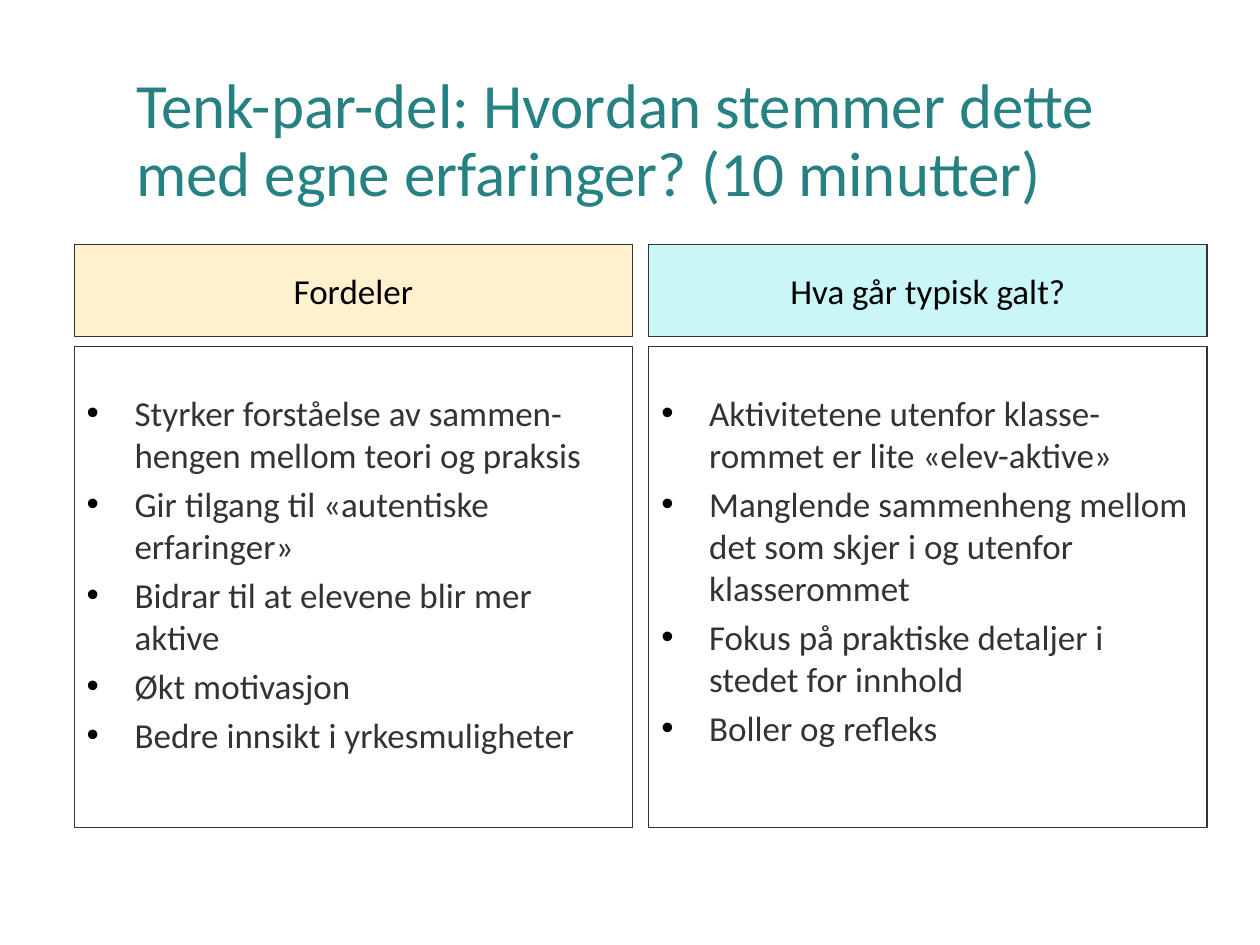
from dataclasses import dataclass

from lxml import etree
from pptx import Presentation
from pptx.dml.color import RGBColor
from pptx.enum.shapes import MSO_SHAPE
from pptx.enum.text import MSO_ANCHOR, MSO_AUTO_SIZE, PP_ALIGN
from pptx.oxml.ns import qn
from pptx.util import Inches, Pt

RECT = MSO_SHAPE.RECTANGLE
TOP, MIDDLE = MSO_ANCHOR.TOP, MSO_ANCHOR.MIDDLE
LEFT, CENTER = PP_ALIGN.LEFT, PP_ALIGN.CENTER


@dataclass(frozen=True)
class Theme:
    font: str = "Calibri"
    title: str = "268183"
    ink: str = "333333"
    black: str = "000000"
    title_size: int = 36
    text_size: int = 20
    bullet_gap: int = 4
    line_width: float = 0.75


@dataclass(frozen=True)
class Grid:
    left: float = 0.59
    column: float = 4.43
    gutter: float = 0.13
    header_top: float = 1.94
    header_height: float = 0.73
    row_gap: float = 0.08
    body_height: float = 3.82

    def x(self, col: int) -> float:
        return self.left + col * (self.column + self.gutter)

    @property
    def body_top(self) -> float:
        return self.header_top + self.header_height + self.row_gap


@dataclass(frozen=True)
class Column:
    heading: str
    fill: str
    points: tuple[str, ...]


THEME = Theme()
GRID = Grid()
COLUMNS = (
    Column("Fordeler", "FFF1CE", (
        "Styrker forståelse av sammen-hengen mellom teori og praksis",
        "Gir tilgang til «autentiske erfaringer»",
        "Bidrar til at elevene blir mer aktive",
        "Økt motivasjon",
        "Bedre innsikt i yrkesmuligheter",
    )),
    Column("Hva går typisk galt?", "C9F7F8", (
        "Aktivitetene utenfor klasse-rommet er lite «elev-aktive»",
        "Manglende sammenheng mellom det som skjer i og utenfor klasserommet",
        "Fokus på praktiske detaljer i stedet for innhold",
        "Boller og refleks",
    )),
)


def add_run(p, text: str, size: int, color: str) -> None:
    r = p.add_run()
    r.text = text
    r.font.name = THEME.font
    r.font.size = Pt(size)
    r.font.color.rgb = RGBColor.from_string(color)


def set_frame(tf, anchor, side: float, top: float, bottom: float) -> None:
    tf.word_wrap = True
    tf.auto_size = MSO_AUTO_SIZE.NONE
    tf.vertical_anchor = anchor
    tf.margin_left = tf.margin_right = Inches(side)
    tf.margin_top, tf.margin_bottom = Inches(top), Inches(bottom)


def add_bullet(p) -> None:
    pPr = p._p.get_or_add_pPr()
    pPr.set("marL", str(Inches(0.38)))
    pPr.set("indent", str(-Inches(0.38)))
    color = etree.SubElement(pPr, qn("a:buClr"))
    etree.SubElement(color, qn("a:srgbClr"), val=THEME.black)
    etree.SubElement(pPr, qn("a:buFont"), typeface="Arial")
    etree.SubElement(pPr, qn("a:buChar"), char="•")


def add_box(s, col: int, top: float, height: float, fill: str | None = None):
    sp = s.shapes.add_shape(RECT, Inches(GRID.x(col)), Inches(top),
                            Inches(GRID.column), Inches(height))
    sp.shadow.inherit = False
    if fill:
        sp.fill.solid()
        sp.fill.fore_color.rgb = RGBColor.from_string(fill)
    else:
        sp.fill.background()
    sp.line.color.rgb = RGBColor.from_string(THEME.ink)
    sp.line.width = Pt(THEME.line_width)
    return sp


def add_title(s, text: str) -> None:
    sp = s.shapes.title
    sp.left, sp.top = Inches(0.98), Inches(0.4)
    sp.width, sp.height = Inches(8.67), Inches(1.45)
    set_frame(sp.text_frame, MIDDLE, 0.1, 0.1, 0.1)
    p = sp.text_frame.paragraphs[0]
    p.alignment = LEFT
    p.line_spacing = 0.9
    add_run(p, text, THEME.title_size, THEME.title)


def add_header(s, col: int, column: Column) -> None:
    tf = add_box(s, col, GRID.header_top, GRID.header_height, column.fill).text_frame
    set_frame(tf, TOP, 0.1, 0.2, 0.2)
    p = tf.paragraphs[0]
    p.alignment = CENTER
    add_run(p, column.heading, THEME.text_size, THEME.black)


def add_body(s, col: int, column: Column) -> None:
    tf = add_box(s, col, GRID.body_top, GRID.body_height).text_frame
    set_frame(tf, TOP, 0.1, 0.36, 0.05)
    for i, point in enumerate(column.points):
        p = tf.add_paragraph() if i else tf.paragraphs[0]
        add_bullet(p)
        p.alignment = LEFT
        p.space_before = Pt(THEME.bullet_gap if i else 0)
        add_run(p, point, THEME.text_size, THEME.ink)


def main() -> None:
    prs = Presentation()
    prs.slide_width, prs.slide_height = Inches(10), Inches(7.5)
    s = prs.slides.add_slide(prs.slide_layouts[5])

    # Title
    add_title(s, "Tenk-par-del: Hvordan stemmer dette med egne erfaringer? (10 minutter)")

    # Two columns, each a heading above a bulleted box
    for col, column in enumerate(COLUMNS):
        add_body(s, col, column)
        add_header(s, col, column)

    prs.save("out.pptx")


if __name__ == "__main__":
    main()
